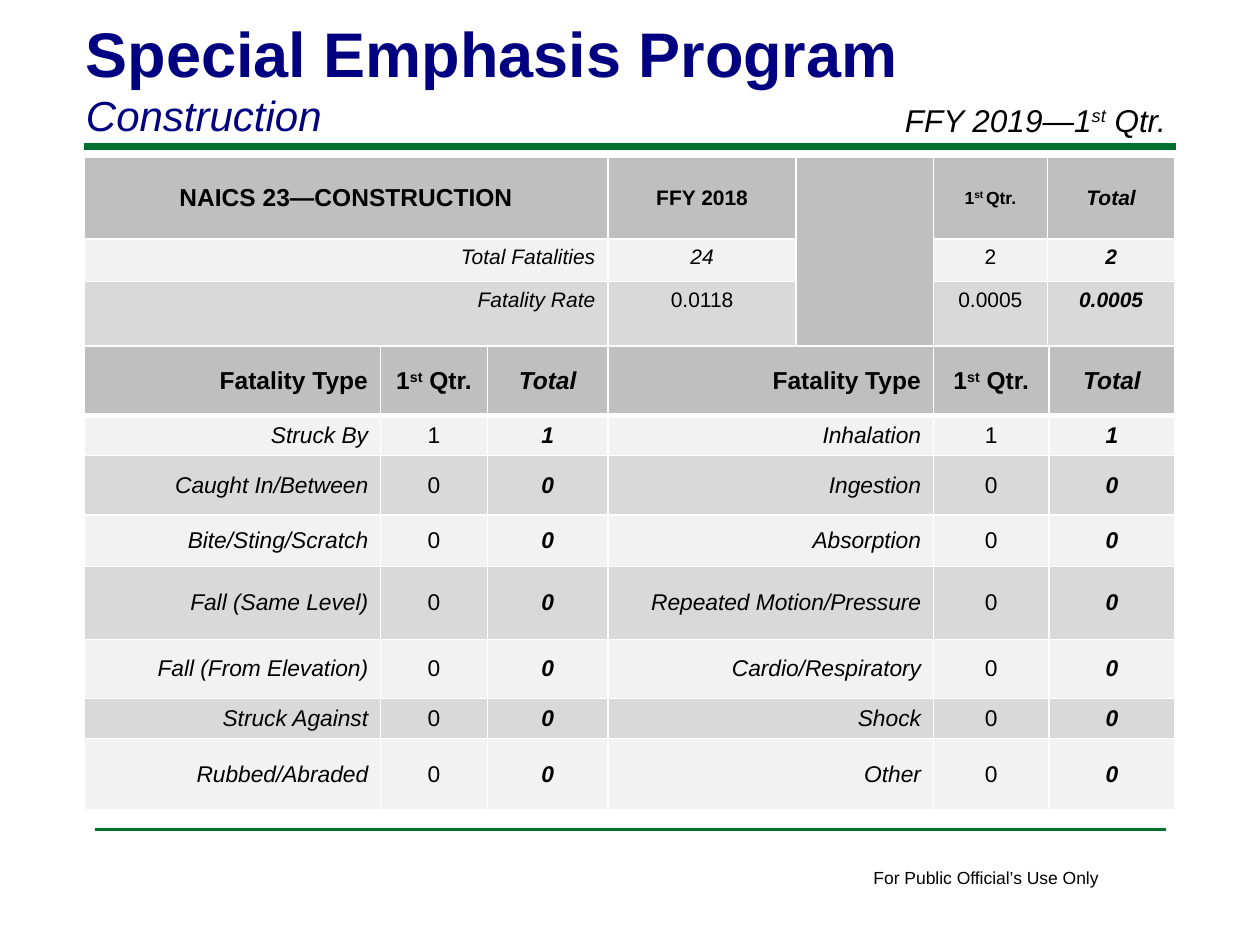
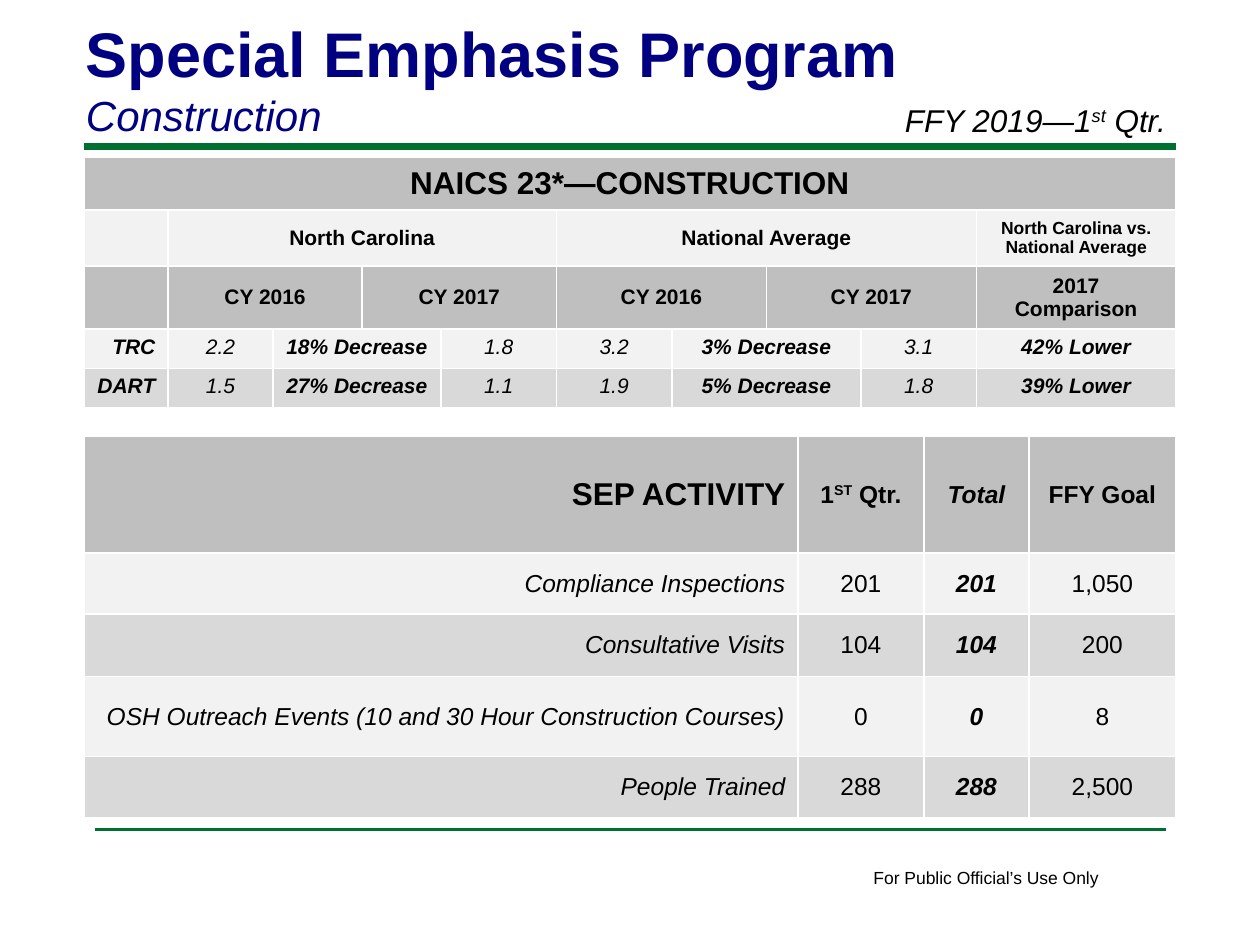
from collections import namedtuple

import pptx
import pptx.dml.color
import pptx.enum.shapes
import pptx.enum.text
import pptx.oxml
import pptx.oxml.ns
import pptx.util

Pt = pptx.util.Pt
ALIGN = pptx.enum.text.PP_ALIGN
ANCHOR = pptx.enum.text.MSO_ANCHOR
NS = pptx.oxml.ns.nsdecls("a")

COLORS = {
    "navy": "000080", "green": "007030", "black": "000000", "white": "FFFFFF",
    "header": "BFBFBF", "light": "F2F2F2", "dark": "D9D9D9",
}
FONT = "Arial"
LEFT = 48

# Cell styles: alignment plus font values that replace the row's own.
STYLES = {
    "head": (ALIGN.CENTER, {"bold": True}),
    "small head": (ALIGN.CENTER, {"bold": True, "size": Pt(10)}),
    "large head": (ALIGN.RIGHT, {"bold": True, "size": Pt(18)}),
    "naics head": (ALIGN.CENTER, {"bold": True, "size": Pt(14)}),
    "type head": (ALIGN.RIGHT, {"bold": True}),
    "label": (ALIGN.RIGHT, {"italic": True}),
    "bold label": (ALIGN.RIGHT, {"bold": True, "italic": True}),
    "value": (ALIGN.CENTER, {}),
    "rate": (ALIGN.CENTER, {"italic": True}),
    "total": (ALIGN.CENTER, {"bold": True, "italic": True}),
}

Row = namedtuple("Row", "height fill size styles values anchor",
                 defaults=[ANCHOR.MIDDLE])


def rgb(name):
    return pptx.dml.color.RGBColor.from_string(COLORS[name])


class Deck:
    def __init__(self):
        self.prs = pptx.Presentation()
        self.prs.slide_width, self.prs.slide_height = Pt(720), Pt(540)
        self.s = None

    def slide(self):
        """Start a slide with the shared title, rules and footer."""
        self.s = self.prs.slides.add_slide(self.prs.slide_layouts[6])
        self.line(48, 672, 84, 4)
        self.line(54, 666, 474, 2)
        self.text((492, 492, 145, 19.5),
                  [("For Public Official’s Use Only", {"size": Pt(10)})],
                  wrap=False)
        self.text((42, 4.5, 594, 80),
                  [("Special Emphasis Program", {"size": Pt(36), "bold": True}),
                   ("Construction", {"size": Pt(24), "italic": True})], "navy")
        self.text((510, 54, 180, 29),
                  [("FFY 2019—1^st^ Qtr.", {"size": Pt(18), "italic": True})])

    def line(self, x1, x2, y, width):
        kind = pptx.enum.shapes.MSO_CONNECTOR.STRAIGHT
        sp = self.s.shapes.add_connector(kind, Pt(x1), Pt(y), Pt(x2), Pt(y))
        sp.line.color.rgb, sp.line.width = rgb("green"), Pt(width)
        effects = pptx.oxml.parse_xml(f"<a:effectLst {NS}/>")
        sp._element.spPr.append(effects)

    def add_runs(self, p, text, font, color="black"):
        """Fill a paragraph; text between carets is superscript."""
        for n, part in enumerate(text.split("^")):
            r = p.add_run()
            r.text = part
            for key, value in {"name": FONT, **font}.items():
                setattr(r.font, key, value)
            r.font.color.rgb = rgb(color)
            if n % 2:
                r.font._element.set("baseline", "30000")

    def text(self, box, lines, color="black", wrap=True):
        sp = self.s.shapes.add_textbox(*map(Pt, box))
        tf = sp.text_frame
        tf.word_wrap = wrap
        for n, (text, font) in enumerate(lines):
            p = tf.add_paragraph() if n else tf.paragraphs[0]
            self.add_runs(p, text, font, color)

    def borders(self, cell, top, bottom):
        for side, width in zip("LRTB", (1, 1, top, bottom)):
            cell._tc.get_or_add_tcPr().append(pptx.oxml.parse_xml(
                f'<a:ln{side} {NS} w="{Pt(width)}"><a:solidFill>'
                f'<a:srgbClr val="{COLORS["white"]}"/></a:solidFill></a:ln{side}>'))

    def table(self, top, widths, rows, merges=(), header_rule=1):
        """Add a table; merges holds (first row, first col, last row, last col)."""
        frame = self.s.shapes.add_table(
            len(rows), len(widths), Pt(LEFT), Pt(top), Pt(sum(widths)),
            Pt(sum(row.height for row in rows)))
        tbl = frame.table
        tbl.first_row = tbl.horz_banding = False
        for col, width in zip(tbl.columns, widths):
            col.width = Pt(width)
        for i, row in enumerate(rows):
            tbl.rows[i].height = Pt(row.height)
            for j, (style, value) in enumerate(zip(row.styles, row.values)):
                cell = tbl.cell(i, j)
                self.borders(cell, header_rule if i == 1 else 1,
                             header_rule if i == 0 else 1)
                cell.fill.solid()
                cell.fill.fore_color.rgb = rgb(row.fill)
                cell.vertical_anchor = row.anchor
                if value:
                    align, font = STYLES[style]
                    p = cell.text_frame.paragraphs[0]
                    p.alignment = align
                    self.add_runs(p, value, {"size": Pt(row.size), **font})
        for r1, c1, r2, c2 in merges:
            tbl.cell(r1, c1).merge(tbl.cell(r2, c2))


def stripe(n):
    return ("light", "dark")[n % 2]


def fatalities(deck):
    deck.slide()
    body = ["label", "rate", "value", "value", "total"]
    plain = ["label", "value", "value", "value", "total"]
    deck.table(90, [299.5, 107.5, 78.5, 65, 73], [
        Row(46.5, "header", 12, ["naics head", "head", "head", "small head", "total"],
            ["NAICS 23—CONSTRUCTION", "FFY 2018", None, "1^st ^Qtr.", "Total"]),
        Row(24.5, "light", 12, body,
            ["Total Fatalities", "24", None, "2", "2"], ANCHOR.TOP),
        Row(36.5, "dark", 12, plain,
            ["Fatality Rate", "0.0118", None, "0.0005", "0.0005"], ANCHOR.TOP),
    ], merges=[(0, 2, 2, 2)])

    heading = ["Fatality Type", "1^st^ Qtr.", "Total"]
    rows = [Row(39.5, "header", 14, ["type head", "head", "total"] * 2, heading * 2)]
    types = [
        (22.5, "Struck By", "Inhalation", "1"),
        (34, "Caught In/Between", "Ingestion", "0"),
        (29.5, "Bite/Sting/Scratch", "Absorption", "0"),
        (41.5, "Fall (Same Level)", "Repeated Motion/Pressure", "0"),
        (34, "Fall (From Elevation)", "Cardio/Respiratory", "0"),
        (22.5, "Struck Against", "Shock", "0"),
        (40.5, "Rubbed/Abraded", "Other", "0"),
    ]
    for n, (height, injury, illness, count) in enumerate(types):
        rows.append(Row(height, stripe(n), 13, ["label", "value", "total"] * 2,
                        [injury, count, count, illness, count, count]))
    deck.table(198, [169.5, 61, 69, 186, 66, 72], rows, header_rule=3)


def rates_and_activity(deck):
    deck.slide()
    heads = ["head"] * 10
    rates = ["bold label"] + ["rate", "total", "total", "rate"] * 2 + ["total"]
    years = ["CY 2016", None, "CY 2017", None]
    rows = [
        Row(30, "header", 18, heads, ["NAICS 23*—CONSTRUCTION"] + [None] * 9),
        Row(32, "light", 12, heads[:9] + ["small head"],
            [None, "North Carolina", None, None, None,
             "National Average", None, None, None,
             "North Carolina vs. National Average"]),
        Row(36, "header", 12, heads, [None, *years, *years, "2017 Comparison"]),
        Row(22.5, "light", 12, rates,
            ["TRC", "2.2", "18% Decrease", None, "1.8",
             "3.2", "3% Decrease", None, "3.1", "42% Lower"], ANCHOR.TOP),
        Row(22.5, "dark", 12, rates,
            ["DART", "1.5", "27% Decrease", None, "1.1",
             "1.9", "5% Decrease", None, "1.8", "39% Lower"], ANCHOR.TOP),
    ]
    merges = [(0, 0, 0, 9)]
    for c in (1, 5):
        merges += [(1, c, 1, c + 3), (2, c, 2, c + 1), (2, c + 2, 2, c + 3),
                   (3, c + 1, 3, c + 2), (4, c + 1, 4, c + 2)]
    deck.table(90, [48, 60, 51, 45, 66, 66, 54, 54, 66, 114], rows, merges)

    rows = [Row(66.5, "header", 14, ["large head", "head", "total", "head"],
                ["SEP ACTIVITY", "1^ST^ Qtr.", "Total", "FFY Goal"])]
    activities = [
        (35, "Compliance Inspections", "201", "1,050"),
        (35.5, "Consultative Visits", "104", "200"),
        (46, "OSH Outreach Events (10 and 30 Hour Construction Courses)", "0", "8"),
        (35, "People Trained", "288", "2,500"),
    ]
    for n, (height, activity, count, goal) in enumerate(activities):
        rows.append(Row(height, stripe(n), 14, ["label", "value", "total", "value"],
                        [activity, count, count, goal]))
    deck.table(249.5, [408, 72, 60, 84], rows)


def main():
    deck = Deck()
    fatalities(deck)
    rates_and_activity(deck)
    deck.prs.save("out.pptx")


if __name__ == "__main__":
    main()
